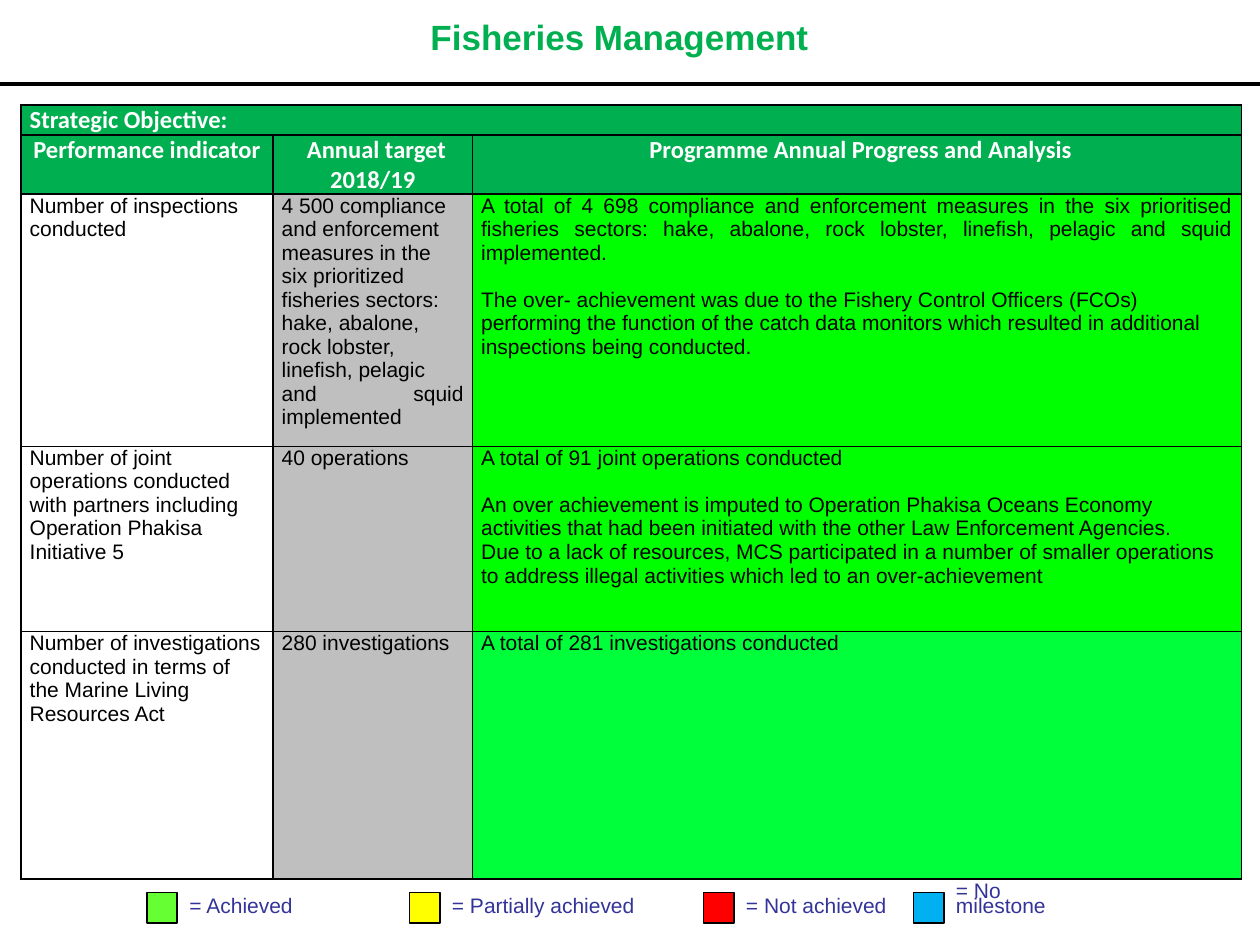
from lxml import etree
from pptx import Presentation
from pptx.dml.color import RGBColor
from pptx.enum.shapes import MSO_CONNECTOR, MSO_SHAPE
from pptx.enum.text import MSO_ANCHOR, PP_ALIGN
from pptx.oxml.ns import qn
from pptx.util import Pt

LEFT, CENTER, JUSTIFY = PP_ALIGN.LEFT, PP_ALIGN.CENTER, PP_ALIGN.JUSTIFY
MIDDLE, BOTTOM = MSO_ANCHOR.MIDDLE, MSO_ANCHOR.BOTTOM

COLORS = {
    "black": "000000", "white": "FFFFFF", "header": "00B050", "target": "BFBFBF",
    "progress": "00FF00", "progress_last": "00FF3B", "label": "333399",
    "achieved": "66FF33", "partial": "FFFF00", "missed": "FF0000", "none": "00B0F0",
}
TITLE = "Fisheries Management"
OBJECTIVE = "Strategic Objective:"
# Heading text and first-line indent
HEADINGS = [("Performance indicator", 0), ("Annual target 2018/19", 4.3),
            ("Programme Annual Progress and Analysis", 4.3)]
# A paragraph is (text, alignment, space before)
GAP = 13.5
TARGET_LINES = ["4 500 compliance", "and enforcement", "measures in the", "six prioritized",
                "fisheries sectors:", "hake, abalone,", "rock lobster,", "linefish, pelagic",
                "and squid implemented"]
ROWS = [
    ([("Number of inspections conducted", LEFT, 0)],
     [(line, JUSTIFY, 0) for line in TARGET_LINES],
     [("A total of 4 698 compliance and enforcement measures in the six prioritised fisheries "
       "sectors: hake, abalone, rock lobster, linefish, pelagic and squid implemented.",
       JUSTIFY, 0),
      ("The over- achievement was due to the Fishery Control Officers (FCOs) performing the "
       "function of the catch data monitors which resulted in additional inspections being "
       "conducted.", LEFT, GAP)]),
    ([("Number of joint operations conducted with partners including Operation Phakisa "
       "Initiative 5", LEFT, 0)],
     [("40 operations", LEFT, 0)],
     [("A total of 91 joint operations conducted", LEFT, 0),
      ("An over achievement is imputed to Operation Phakisa Oceans Economy activities that had "
       "been initiated with the other Law Enforcement Agencies.", LEFT, GAP),
      ("Due to a lack of resources, MCS participated in a number of smaller operations to "
       "address illegal activities which led to an over-achievement", LEFT, 0)]),
    ([("Number of investigations conducted in terms of the Marine Living Resources Act",
       LEFT, 0)],
     [("280 investigations", LEFT, 0)],
     [("A total of 281 investigations conducted", LEFT, 0)]),
]
PROGRESS_FILLS = ["progress", "progress", "progress_last"]
# Left edge, colour, label lines
LEGEND = [(84, "achieved", ["= Achieved"]), (234, "partial", ["= Partially achieved"]),
          (402, "missed", ["= Not achieved"]), (522, "none", ["= No", "milestone"])]

PAGE_WIDTH, PAGE_HEIGHT = 720, 540
COLUMN_WIDTHS = [144, 114, 439.4]
ROW_HEIGHTS = [17.1, 33.9, 134.3, 106, 141.2]
TABLE_LEFT, TABLE_TOP = 12, 60
SQUARE_TOP, SQUARE_SIZE = 510, 17.3
LABEL_OFFSET, LABEL_WIDTH, LABEL_HEIGHT = 24.3, 125, 24


def rgb(name):
    """Return the named colour."""
    return RGBColor.from_string(COLORS[name])


def write(frame, paragraphs, font, size, color, bold=False, spacing=None):
    """Fill a text frame with (text, alignment, space before) paragraphs."""
    for index, (text, alignment, before) in enumerate(paragraphs):
        paragraph = frame.add_paragraph() if index else frame.paragraphs[0]
        paragraph.text = text
        paragraph.alignment = alignment
        paragraph.space_before = Pt(before)
        if spacing:
            paragraph.line_spacing = spacing
        paragraph.font.name = font
        paragraph.font.size = Pt(size)
        paragraph.font.bold = bold
        paragraph.font.color.rgb = rgb(color)


def add_label(page, left, top, width, height, anchor):
    """Add a wrapped text box without margins and return its frame."""
    frame = page.shapes.add_textbox(Pt(left), Pt(top), Pt(width), Pt(height)).text_frame
    frame.word_wrap = True
    frame.vertical_anchor = anchor
    frame.margin_left = frame.margin_right = frame.margin_top = frame.margin_bottom = 0
    return frame


def style_cell(cell, fill):
    """Set the margins, black borders and fill of a cell."""
    cell.margin_left = cell.margin_right = Pt(5)
    cell.margin_top = cell.margin_bottom = 0
    properties = cell._tc.get_or_add_tcPr()
    for side in ("lnL", "lnR", "lnT", "lnB"):
        border = etree.SubElement(properties, qn("a:" + side), w=str(Pt(1)))
        solid = etree.SubElement(border, qn("a:solidFill"))
        etree.SubElement(solid, qn("a:srgbClr"), val=COLORS["black"])
    cell.fill.solid()
    cell.fill.fore_color.rgb = rgb(fill)


def add_progress_table(page):
    """Add the table of indicators, targets and progress."""
    table = page.shapes.add_table(
        len(ROW_HEIGHTS), len(COLUMN_WIDTHS), Pt(TABLE_LEFT), Pt(TABLE_TOP),
        Pt(sum(COLUMN_WIDTHS)), Pt(sum(ROW_HEIGHTS))).table
    for column, width in zip(table.columns, COLUMN_WIDTHS):
        column.width = Pt(width)
    for row, height in zip(table.rows, ROW_HEIGHTS):
        row.height = Pt(height)

    fills = [["header"] * 3] * 2 + [["white", "target", fill] for fill in PROGRESS_FILLS]
    for row, row_fills in zip(table.rows, fills):
        for cell, fill in zip(row.cells, row_fills):
            style_cell(cell, fill)

    table.cell(0, 0).merge(table.cell(0, 2))
    write(table.cell(0, 0).text_frame, [(OBJECTIVE, LEFT, 0)], "Calibri", 14, "white", True)
    for column, (heading, indent) in enumerate(HEADINGS):
        frame = table.cell(1, column).text_frame
        write(frame, [(heading, CENTER, 0)], "Calibri", 14, "white", True)
        frame.paragraphs[0]._p.get_or_add_pPr().set("indent", str(Pt(indent)))
    for row, contents in enumerate(ROWS, start=2):
        for column, paragraphs in enumerate(contents):
            write(table.cell(row, column).text_frame, paragraphs, "Arial", 12, "black")


def add_legend_entry(page, left, fill, lines):
    """Add one coloured square and its label."""
    square = page.shapes.add_shape(MSO_SHAPE.RECTANGLE, Pt(left), Pt(SQUARE_TOP),
                                   Pt(SQUARE_SIZE), Pt(SQUARE_SIZE))
    square.shadow.inherit = False
    square.fill.solid()
    square.fill.fore_color.rgb = rgb(fill)
    square.line.color.rgb = rgb("black")
    square.line.width = Pt(1)
    bottom = SQUARE_TOP + SQUARE_SIZE - 3.6
    frame = add_label(page, left + LABEL_OFFSET, bottom - LABEL_HEIGHT,
                      LABEL_WIDTH, LABEL_HEIGHT, BOTTOM)
    write(frame, [(line, LEFT, 0) for line in lines], "Arial", 12, "label", spacing=0.6)


deck = Presentation()
deck.slide_width, deck.slide_height = Pt(PAGE_WIDTH), Pt(PAGE_HEIGHT)
page = deck.slides.add_slide(deck.slide_layouts[6])

title = add_label(page, 0, 6, 708, 30, MIDDLE)
write(title, [(TITLE, CENTER, 0)], "Arial", 20, "header", True)

rule = page.shapes.add_connector(MSO_CONNECTOR.STRAIGHT, 0, Pt(48), Pt(PAGE_WIDTH), Pt(48))
rule.line.color.rgb = rgb("black")
rule.line.width = Pt(2)
etree.SubElement(rule._element.spPr, qn("a:effectLst"))

add_progress_table(page)
for entry in LEGEND:
    add_legend_entry(page, *entry)

deck.save("out.pptx")
